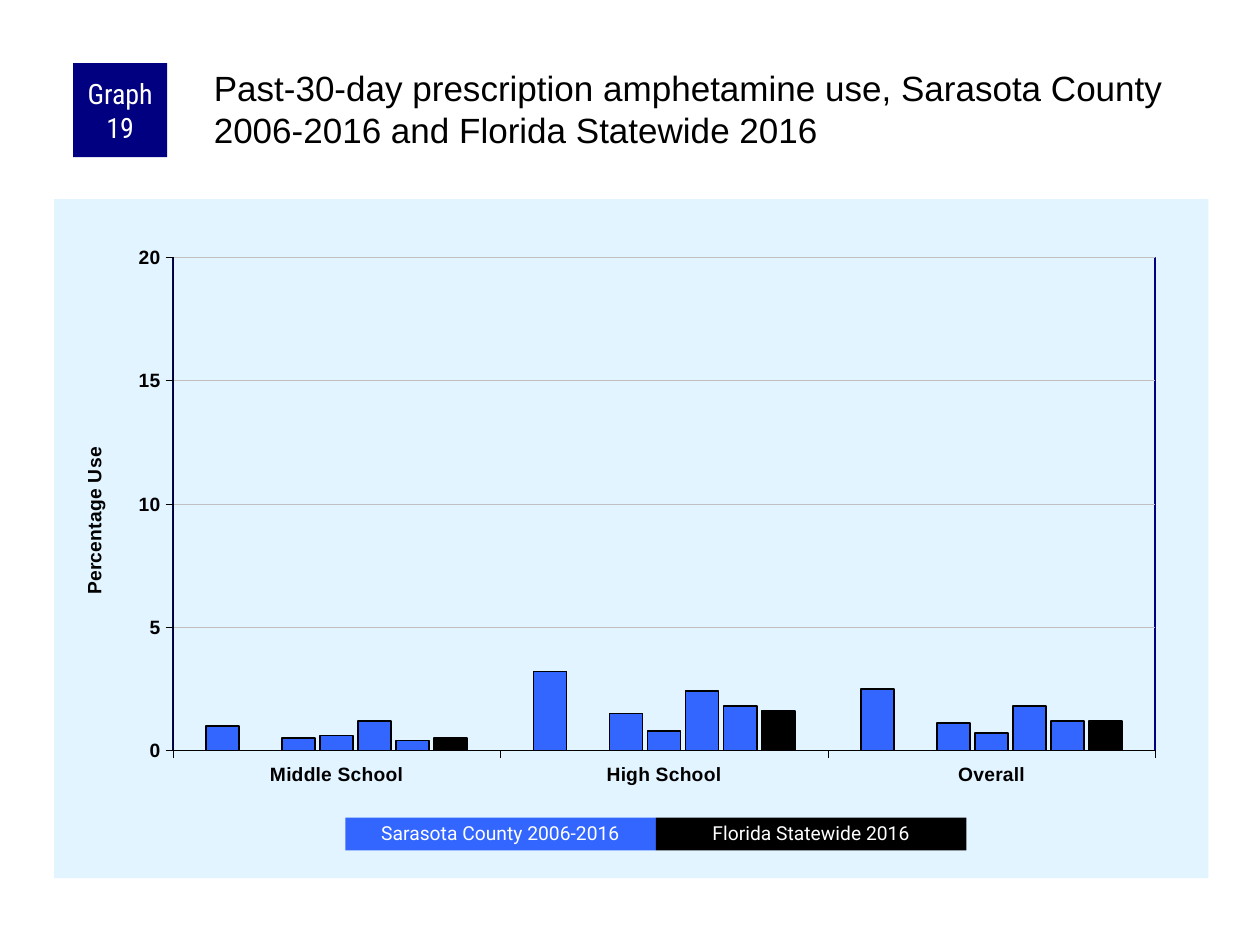
from dataclasses import dataclass

from lxml.etree import fromstring
from pptx import Presentation
from pptx.chart.data import CategoryChartData
from pptx.dml.color import RGBColor
from pptx.enum.chart import XL_CHART_TYPE, XL_TICK_MARK
from pptx.enum.shapes import MSO_SHAPE
from pptx.enum.text import MSO_ANCHOR, PP_ALIGN
from pptx.util import Inches, Pt

NS = ('xmlns:c="http://schemas.openxmlformats.org/drawingml/2006/chart" '
      'xmlns:a="http://schemas.openxmlformats.org/drawingml/2006/main"')


@dataclass(frozen=True)
class Theme:
    navy: str = "000080"
    blue: str = "3366FF"
    black: str = "000000"
    white: str = "FFFFFF"
    panel: str = "E1F4FF"
    grid: str = "C0C0C0"
    sans: str = "Arial"
    label: str = "Roboto"
    narrow: str = "Roboto Condensed"
    title_size: int = 20
    badge_size: int = 16
    axis_size: int = 11
    chart_size: int = 8


T = Theme()
CATEGORIES = ["Middle School", "High School", "Overall"]
COUNTY = [(1, 3.2, 2.5), (0, 0, 0), (0.5, 1.5, 1.1),
          (0.6, 0.8, 0.7), (1.2, 2.4, 1.8), (0.4, 1.8, 1.2)]
STATE = (0.5, 1.6, 1.2)


def rgb(color):
    return RGBColor.from_string(color)


def style_font(font, name, size, color, bold=False):
    font.name, font.size, font.bold = name, Pt(size), bold
    font.color.rgb = rgb(color)


def style_line(line, color, width):
    line.color.rgb = rgb(color)
    line.width = Pt(width)


def inches(box):
    return [Inches(v) for v in box]


def add_block(s, box, text, fill, name, size, spacing=1.0, inset=0.05):
    sp = s.shapes.add_shape(MSO_SHAPE.RECTANGLE, *inches(box))
    sp.shadow.inherit = False
    sp.fill.solid()
    sp.fill.fore_color.rgb = rgb(fill)
    sp.line.fill.background()
    tf = sp.text_frame
    tf.word_wrap = True
    tf.vertical_anchor = MSO_ANCHOR.MIDDLE
    tf.margin_left = tf.margin_right = Inches(inset)
    tf.margin_top = tf.margin_bottom = 0
    tf.text = text
    p = tf.paragraphs[0]
    p.alignment = PP_ALIGN.CENTER
    p.line_spacing = spacing
    style_font(p.runs[0].font, name, size, T.white)


def add_header(s, box, number, title):
    x, y, w, h = box
    side = 0.9 * h
    add_block(s, (x, y, side, side), f"Graph {number}", T.navy, T.narrow, T.badge_size)
    indent = 1.31 * h
    sp = s.shapes.add_textbox(*inches((x + indent, y, w - indent, h)))
    tf = sp.text_frame
    tf.word_wrap = True
    tf.margin_left = tf.margin_top = Inches(0.03)
    tf.margin_right = tf.margin_bottom = 0
    tf.text = title
    style_font(tf.paragraphs[0].runs[0].font, T.sans, T.title_size, T.black)


def manual_layout(target, **shares):
    order = ("x", "y", "w", "h")
    target_tag = '<c:layoutTarget val="inner"/>' if target else ""
    modes = "".join(f'<c:{k}Mode val="edge"/>' for k in order[:2])
    values = "".join(f'<c:{k} val="{shares[k]}"/>' for k in order if k in shares)
    return fromstring(f"<c:layout {NS}><c:manualLayout>{target_tag}{modes}{values}"
                      "</c:manualLayout></c:layout>")


def set_layout(parent, layout, after=None):
    for old in parent.findall(layout.tag):
        parent.remove(old)
    if after is None:
        parent.insert(0, layout)
    else:
        after.addnext(layout)


def area_format(fill, line):
    def paint(color):
        if not color:
            return "<a:noFill/>"
        return f'<a:solidFill><a:srgbClr val="{color}"/></a:solidFill>'
    return fromstring(f'<c:spPr {NS}>{paint(fill)}<a:ln w="12700">{paint(line)}</a:ln></c:spPr>')


def style_axes(chart):
    for axis in (chart.category_axis, chart.value_axis):
        axis.major_tick_mark = XL_TICK_MARK.OUTSIDE
        axis.minor_tick_mark = XL_TICK_MARK.NONE
        style_font(axis.tick_labels.font, T.sans, T.axis_size, T.black, True)
        style_line(axis.format.line, T.black, 0.25)
    axis = chart.value_axis
    axis.minimum_scale, axis.maximum_scale, axis.major_unit = 0, 20, 5
    axis.has_major_gridlines = True
    style_line(axis.major_gridlines.format.line, T.grid, 0.25)
    title = axis.axis_title
    tf = title.text_frame
    tf.text = "Percentage Use"
    style_font(tf.paragraphs[0].runs[0].font, T.sans, T.axis_size, T.black, True)
    body = tf._txBody
    body.bodyPr.set("rot", "-5400000")
    body.bodyPr.set("vert", "horz")
    set_layout(title._element, manual_layout(False, x=0.02, y=0.36), body.getparent())


def add_usage_chart(s, box):
    data = CategoryChartData()
    data.categories = CATEGORIES
    for i, values in enumerate(COUNTY + [STATE], 1):
        data.add_series(f"Series {i}", values)
    chart = s.shapes.add_chart(XL_CHART_TYPE.COLUMN_CLUSTERED, *inches(box), data).chart
    chart.has_title = chart.has_legend = False
    style_font(chart.font, T.sans, T.chart_size, T.black)
    plot = chart.plots[0]
    plot.gap_width, plot.overlap, plot.vary_by_categories = 200, -15, False
    for series, color in zip(plot.series, [T.blue] * len(COUNTY) + [T.black]):
        series.invert_if_negative = False
        series.format.fill.solid()
        series.format.fill.fore_color.rgb = rgb(color)
        style_line(series.format.line, T.black, 1)
    style_axes(chart)
    root = chart._chartSpace.chart
    root.addnext(area_format(T.panel, None))
    area = root.plotArea
    set_layout(area, manual_layout(True, x=0.103, y=0.086, w=0.851, h=0.726))
    area.append(area_format(None, T.navy))


def add_legend(s, box, entries):
    x, y, w, h = box
    step = w / len(entries)
    for i, (text, color) in enumerate(entries):
        add_block(s, (x + i * step, y, step, h), text, color, T.label, T.axis_size, 0.9)


def main():
    prs = Presentation()
    prs.slide_width, prs.slide_height = Inches(10), Inches(7.5)
    s = prs.slides.add_slide(prs.slide_layouts[6])
    add_usage_chart(s, (0.43, 1.58, 9.16, 5.39))
    add_header(s, (0.58, 0.5, 9.01, 0.83), 19,
               "Past-30-day prescription amphetamine use, Sarasota County "
               "2006-2016 and Florida Statewide 2016")
    add_legend(s, (2.74, 6.49, 4.93, 0.26),
               [("Sarasota County 2006-2016", T.blue), ("Florida Statewide 2016", T.black)])
    prs.save("out.pptx")


if __name__ == "__main__":
    main()
